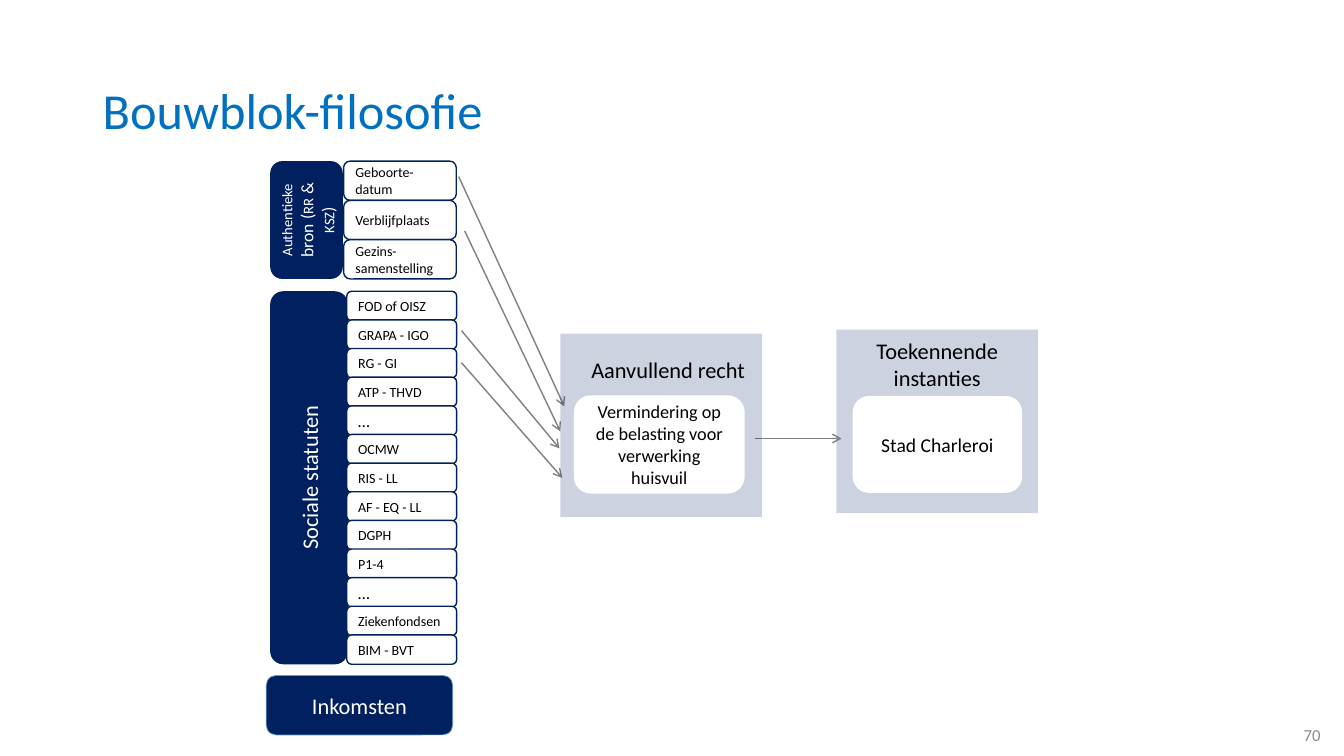
from dataclasses import dataclass

import lxml.etree
import pptx
import pptx.dml.color
import pptx.enum.shapes
import pptx.enum.text
import pptx.oxml.ns
import pptx.util

Cm = pptx.util.Cm
Pt = pptx.util.Pt
RGBColor = pptx.dml.color.RGBColor
ALIGN = pptx.enum.text.PP_ALIGN
ANCHOR = pptx.enum.text.MSO_ANCHOR
SHAPE = pptx.enum.shapes.MSO_SHAPE
qn = pptx.oxml.ns.qn

FONT = "Calibri"
NAVY = RGBColor(0x00, 0x20, 0x60)
TITLE_BLUE = RGBColor(0x00, 0x70, 0xC0)
EDGE_BLUE = RGBColor(0x5B, 0x9B, 0xD5)
WHITE = RGBColor(0xFF, 0xFF, 0xFF)
BLACK = RGBColor(0x00, 0x00, 0x00)
GREY = RGBColor(0x80, 0x80, 0x80)
NUMBER_GREY = RGBColor(0x8C, 0x8C, 0x8C)


@dataclass
class Run:
    text: str
    size: float


@dataclass
class Box:
    left: float
    top: float
    width: float
    height: float
    runs: list[Run]
    fill: RGBColor | None = None
    color: RGBColor = BLACK
    line: RGBColor | None = None
    line_width: float = 1
    align: ALIGN = ALIGN.CENTER
    anchor: ANCHOR = ANCHOR.MIDDLE
    kind: SHAPE = SHAPE.ROUNDED_RECTANGLE
    vertical: bool = False
    opacity: int = 100
    line_spacing: float = 1.0


@dataclass
class Arrow:
    x1: float
    y1: float
    x2: float
    y2: float


def write_text(sp, box: Box) -> None:
    tf = sp.text_frame
    tf.word_wrap = True
    tf.vertical_anchor = box.anchor
    if box.vertical:
        tf._txBody.bodyPr.set("vert", "vert270")
    p = tf.paragraphs[0]
    p.alignment = box.align
    p.line_spacing = box.line_spacing
    for run in box.runs:
        r = p.add_run()
        r.text = run.text
        r.font.name = FONT
        r.font.size = Pt(run.size)
        r.font.color.rgb = box.color


def draw_box(s, box: Box) -> None:
    place = [Cm(v) for v in (box.left, box.top, box.width, box.height)]
    if box.fill is None:
        write_text(s.shapes.add_textbox(*place), box)
        return
    sp = s.shapes.add_shape(box.kind, *place)
    sp.shadow.inherit = False
    sp.fill.solid()
    sp.fill.fore_color.rgb = box.fill
    if box.opacity < 100:
        color = sp._element.spPr.find(qn("a:solidFill"))[0]
        alpha = lxml.etree.SubElement(color, qn("a:alpha"))
        alpha.set("val", str(box.opacity * 1000))
    if box.line is None:
        sp.line.fill.background()
    else:
        sp.line.color.rgb = box.line
        sp.line.width = Pt(box.line_width)
    if box.runs:
        write_text(sp, box)


def draw_arrow(s, arrow: Arrow) -> None:
    sp = s.shapes.add_connector(
        pptx.enum.shapes.MSO_CONNECTOR.STRAIGHT,
        Cm(arrow.x1), Cm(arrow.y1), Cm(arrow.x2), Cm(arrow.y2),
    )
    sp.line.color.rgb = GREY
    sp.line.width = Pt(1)
    tail = lxml.etree.SubElement(sp.line._get_or_add_ln(), qn("a:tailEnd"))
    tail.set("type", "arrow")
    lxml.etree.SubElement(sp._element.spPr, qn("a:effectLst"))


def draw_rows(s, labels: list[str], left: float, top: float, width: float,
              height: float, pitch: float) -> None:
    for i, label in enumerate(labels):
        size = 12 if label == "…" else 10
        draw_box(s, Box(left, top + i * pitch, width, height, [Run(label, size)],
                        WHITE, line=NAVY, align=ALIGN.LEFT))


def draw_panel(s, panel: Box, caption: Box, card: Box) -> None:
    for box in (panel, card, caption):
        draw_box(s, box)


SOURCES = ["Geboorte-datum", "Verblijfplaats", "Gezins-samenstelling"]
STATUSES = [
    "FOD of OISZ", "GRAPA - IGO", "RG - GI", "ATP - THVD", "…", "OCMW", "RIS - LL",
    "AF - EQ - LL", "DGPH", "P1-4", "…", "Ziekenfondsen", "BIM - BVT",
]
SOURCE_LABEL = [
    Run("Authentieke", 10.5), Run(" bron (", 12.5), Run("RR", 10.5),
    Run(" & ", 12.5), Run("KSZ", 10.5), Run(")", 12.5),
]
ARROWS = [
    Arrow(11.71, 5.82, 14.12, 10.87),
    Arrow(11.56, 4.45, 14.22, 10.24),
    Arrow(11.63, 8.33, 14.1, 11.3),
    Arrow(11.63, 9.14, 14.17, 12.04),
    Arrow(19.02, 11.05, 21.21, 11.05),
]


def main() -> None:
    prs = pptx.Presentation()
    prs.slide_width = Cm(33.87)
    prs.slide_height = Cm(19.05)
    s = prs.slides.add_slide(prs.slide_layouts[6])

    draw_box(s, Box(2.34, 1.02, 29.21, 3.68, [Run("Bouwblok-filosofie", 36)],
                    color=TITLE_BLUE, align=ALIGN.LEFT, line_spacing=0.9))
    draw_box(s, Box(25.91, 18.01, 7.62, 1.02, [Run("70", 12)],
                    color=NUMBER_GREY, align=ALIGN.RIGHT))

    draw_box(s, Box(6.81, 4.06, 1.83, 2.97, SOURCE_LABEL, NAVY, WHITE, vertical=True))
    draw_rows(s, SOURCES, 8.66, 4.06, 2.84, 0.99, 0.99)

    draw_box(s, Box(6.81, 7.34, 1.96, 9.4, [Run("Sociale statuten", 16)],
                    NAVY, WHITE, vertical=True))
    pitch = (9.4 - 0.74) / (len(STATUSES) - 1)
    draw_rows(s, STATUSES, 8.74, 7.34, 2.77, 0.74, pitch)

    draw_box(s, Box(6.71, 17.02, 4.7, 1.5, [Run("Inkomsten", 16)],
                    NAVY, WHITE, EDGE_BLUE, 0.5))

    draw_panel(
        s,
        Box(21.08, 8.31, 5.08, 4.62, [], NAVY, kind=SHAPE.RECTANGLE, opacity=20),
        Box(21.08, 8.38, 5.08, 1.63, [Run("Toekennende instanties", 16)], anchor=ANCHOR.TOP),
        Box(21.49, 9.98, 4.27, 2.44, [Run("Stad Charleroi", 14)], WHITE),
    )
    for arrow in ARROWS:
        draw_arrow(s, arrow)
    draw_panel(
        s,
        Box(14.12, 8.41, 5.08, 4.62, [], NAVY, kind=SHAPE.RECTANGLE, opacity=20),
        Box(14.3, 8.84, 5.08, 0.94, [Run("Aanvullend recht", 16)], anchor=ANCHOR.TOP),
        Box(14.48, 9.98, 4.27, 2.44,
            [Run("Vermindering op de belasting voor verwerking huisvuil", 13)],
            WHITE, line=WHITE),
    )
    prs.save("out.pptx")


if __name__ == "__main__":
    main()
